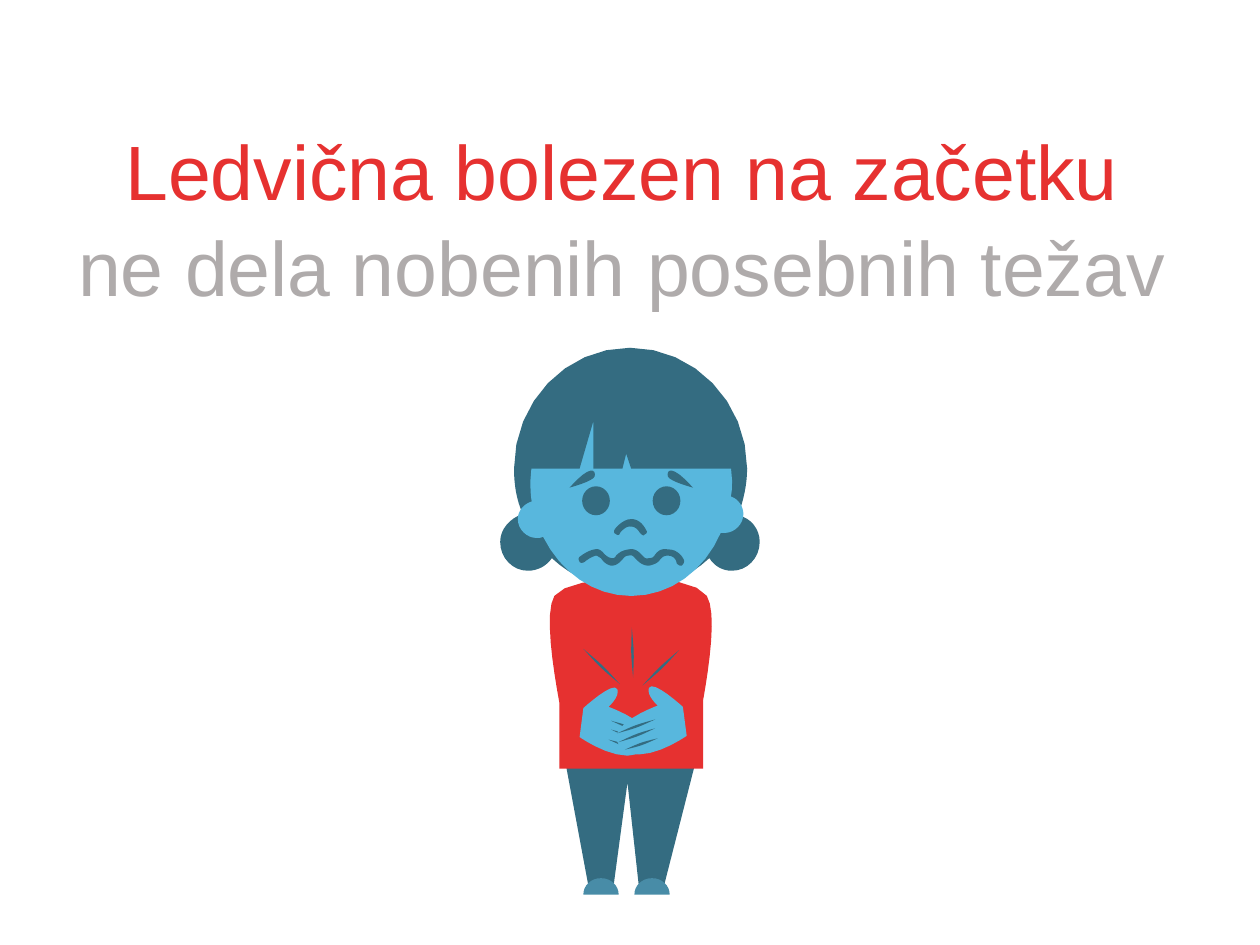
from math import hypot

from pptx import Presentation
from pptx.dml.color import RGBColor
from pptx.enum.shapes import MSO_SHAPE
from pptx.enum.text import MSO_ANCHOR, MSO_AUTO_SIZE, PP_ALIGN
from pptx.util import Cm, Pt

RED = RGBColor(0xE6, 0x31, 0x30)
GREY = RGBColor(0xAF, 0xAB, 0xAB)
DARK = RGBColor(0x34, 0x6C, 0x81)
SKIN = RGBColor(0x58, 0xB7, 0xDD)
SHOE = RGBColor(0x48, 0x8C, 0xA7)

OVAL = MSO_SHAPE.OVAL
CENTER = PP_ALIGN.CENTER
TOP = MSO_ANCHOR.TOP
GROW = MSO_AUTO_SIZE.SHAPE_TO_FIT_TEXT

UNIT = Cm(0.0254)  # the figure is drawn on a grid of 1/100 inch
STEPS = 8          # straight pieces per curve

# Outlines: a pair is a corner, six numbers are a Bézier curve to the last pair.
HAIR = [(586, 409), (590, 397, 593, 385, 593, 372), (593, 319, 551, 276, 500, 276),
        (449, 276, 408, 319, 408, 372), (408, 385, 410, 397, 415, 408),
        (405, 411, 397, 420, 397, 430), (397, 443, 407, 453, 419, 453),
        (427, 453, 434, 449, 438, 443), (454, 458, 476, 468, 500, 468),
        (524, 468, 546, 459, 563, 443), (567, 449, 573, 453, 581, 453),
        (593, 453, 603, 443, 603, 430), (603, 420, 596, 411, 586, 409)]
TROUSERS = [(448, 601), (467, 703), (487, 703), (498, 621), (507, 703), (527, 703), (553, 601)]
JUMPER = [(561, 473), (549, 453, 452, 455, 440, 473), (432, 486, 439, 531, 444, 558),
          (444, 610), (558, 610), (558, 556), (563, 528, 569, 486, 561, 473)]
FACE = [(580, 394), (581, 390, 581, 385, 581, 381), (581, 330, 545, 288, 501, 288),
        (456, 288, 421, 330, 421, 381), (421, 387, 421, 392, 422, 398),
        (416, 400, 411, 405, 411, 412), (411, 420, 418, 427, 426, 427),
        (428, 427, 429, 427, 431, 426), (445, 454, 471, 473, 501, 473),
        (532, 473, 559, 453, 572, 423), (573, 423, 574, 423, 575, 423),
        (583, 423, 590, 416, 590, 408), (590, 402, 586, 396, 580, 394)]
BROW = [(452, 387), (452, 387, 471, 382, 472, 378), (473, 373, 469, 368, 452, 387)]
NOSE = [(511, 425), (510, 425, 509, 424, 508, 423), (506, 420, 504, 418, 501, 418),
        (497, 417, 493, 422, 492, 423), (492, 425, 490, 425, 489, 424),
        (487, 423, 487, 422, 488, 420), (488, 420, 494, 412, 501, 412),
        (506, 412, 510, 415, 513, 421), (514, 422, 513, 424, 512, 424)]
MOUTH = [(540, 449), (539, 449, 538, 448, 537, 447), (537, 446, 536, 441, 530, 441),
         (527, 441, 526, 442, 524, 444), (523, 446, 520, 448, 515, 449),
         (510, 449, 507, 446, 505, 444), (503, 442, 502, 440, 499, 441),
         (496, 441, 495, 443, 494, 444), (492, 446, 490, 449, 485, 449),
         (481, 448, 479, 446, 477, 443), (475, 442, 474, 441, 473, 441),
         (469, 442, 465, 445, 464, 446), (462, 447, 461, 447, 460, 446),
         (459, 444, 459, 443, 460, 442), (460, 442, 466, 437, 472, 436),
         (476, 435, 478, 438, 480, 440), (482, 442, 484, 443, 486, 443),
         (487, 443, 488, 443, 489, 441), (491, 439, 493, 437, 499, 436),
         (504, 435, 507, 438, 509, 440), (511, 442, 512, 444, 515, 443),
         (518, 443, 519, 442, 520, 440), (522, 438, 524, 435, 530, 436),
         (538, 436, 542, 442, 543, 445), (543, 447, 542, 448, 541, 449)]
HAND = [(463, 562), (460, 585), (460, 585, 497, 611, 513, 594),
        (528, 577, 483, 561, 483, 561), (483, 561, 492, 553, 490, 547),
        (487, 540, 463, 562, 463, 562)]
FRINGE = [(408, 372), (460, 372), (471, 334), (471, 372), (494, 372), (497, 360),
          (501, 372), (593, 372), (593, 372, 576, 289, 503, 284),
          (430, 280, 408, 372, 408, 372)]
CREASES = [(485, 572, 515, 583), (485, 579, 514, 590), (483, 587, 509, 596)]
PAIN_LINES = [(463, 515, 492, 543), (501.5, 498, 502.5, 538), (539, 516, 510, 544)]


def mirror(outline, total, dy=0):
    """Flip about the vertical line x = total / 2, then move down by dy."""
    return [tuple(v + dy if i % 2 else total - v for i, v in enumerate(seg))
            for seg in outline]


def flatten(outline):
    """Turn corners and curves into a list of points."""
    pts = []
    for seg in outline:
        if len(seg) == 2:
            pts.append(seg)
            continue
        ctrl = [pts[-1], seg[:2], seg[2:4], seg[4:]]
        for n in range(1, STEPS + 1):
            t = n / STEPS
            weights = ((1 - t) ** 3, 3 * t * (1 - t) ** 2, 3 * t * t * (1 - t), t ** 3)
            pts.append(tuple(sum(w * c[axis] for w, c in zip(weights, ctrl))
                             for axis in (0, 1)))
    return pts


def sliver(x1, y1, x2, y2, bulge=1.3):
    """Outline of a thin stroke that is pointed at both ends."""
    length = hypot(x2 - x1, y2 - y1)
    nx, ny = bulge * (y1 - y2) / length, bulge * (x2 - x1) / length
    mx, my = (x1 + x2) / 2, (y1 + y2) / 2
    a, b = (mx + nx, my + ny), (mx - nx, my - ny)
    return [(x1, y1), a + a + (x2, y2), b + b + (x1, y1)]


class Page:
    def __init__(self, prs, font="Arial", size=Pt(44)):
        self.font, self.size = font, size
        self.s = prs.slides.add_slide(prs.slide_layouts[5])
        self.figure = self.s.shapes.add_group_shape()

    def title(self, lines, left, top, width, height):
        sp = self.s.shapes.title
        sp.left, sp.top, sp.width, sp.height = left, top, width, height
        tf = sp.text_frame
        tf.word_wrap, tf.auto_size, tf.vertical_anchor = True, GROW, TOP
        p = tf.paragraphs[0]
        p.alignment, p.line_spacing = CENTER, 1.05
        for i, (text, color) in enumerate(lines):
            if i:
                p.add_line_break()
            r = p.add_run()
            r.text = text
            r.font.name, r.font.size = self.font, self.size
            r.font.color.rgb = color

    def paint(self, sp, color):
        sp.shadow.inherit = False
        sp.fill.solid()
        sp.fill.fore_color.rgb = color
        sp.line.fill.background()

    def outline(self, outline, color):
        pts = [(x * UNIT, y * UNIT) for x, y in flatten(outline)]
        builder = self.figure.shapes.build_freeform(*pts[0])
        builder.add_line_segments(pts[1:], close=True)
        self.paint(builder.convert_to_shape(), color)

    def oval(self, left, top, width, height, color):
        box = [v * UNIT for v in (left, top, width, height)]
        self.paint(self.figure.shapes.add_shape(OVAL, *box), color)


def main():
    prs = Presentation()
    prs.slide_width, prs.slide_height = Cm(25.4), Cm(19.05)
    page = Page(prs)
    page.title([("Ledvična bolezen na začetku", RED),
                ("ne dela nobenih posebnih težav", GREY)],
               Cm(0.33), Cm(2.26), Cm(24.43), Cm(4.01))

    for outline, color in ((HAIR, DARK), (TROUSERS, DARK), (JUMPER, RED), (FACE, SKIN)):
        page.outline(outline, color)
    for x in (518, 462):
        page.oval(x, 386, 22, 23, DARK)
    for outline in (mirror(BROW, 1002), BROW, NOSE, MOUTH):
        page.outline(outline, DARK)
    for x in (463, 503.5):
        page.outline([(x, 710), (x, 703, x + 6, 697, x + 14, 697),
                      (x + 22, 697, x + 28, 703, x + 28, 710)], SHOE)

    creases = [sliver(*ends) for ends in CREASES]
    page.outline(HAND, SKIN)
    for crease in creases:
        page.outline(crease, DARK)
    page.outline(mirror(HAND, 1005, -1), SKIN)
    for crease in creases:
        page.outline(mirror(crease, 1005, -1), DARK)
    for ends in PAIN_LINES:
        page.outline(sliver(*ends), DARK)
    page.outline(FRINGE, DARK)
    prs.save("out.pptx")


if __name__ == "__main__":
    main()
